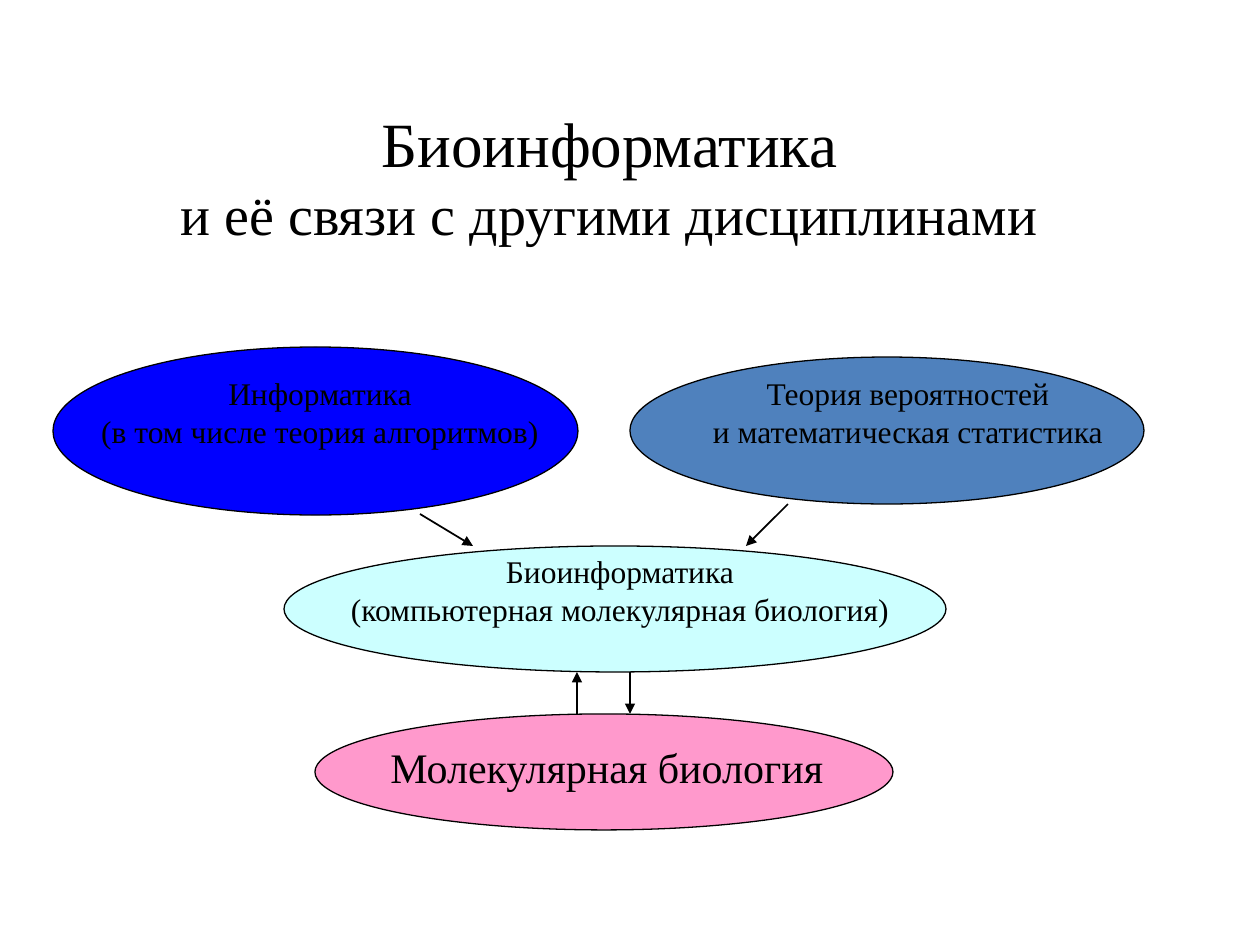
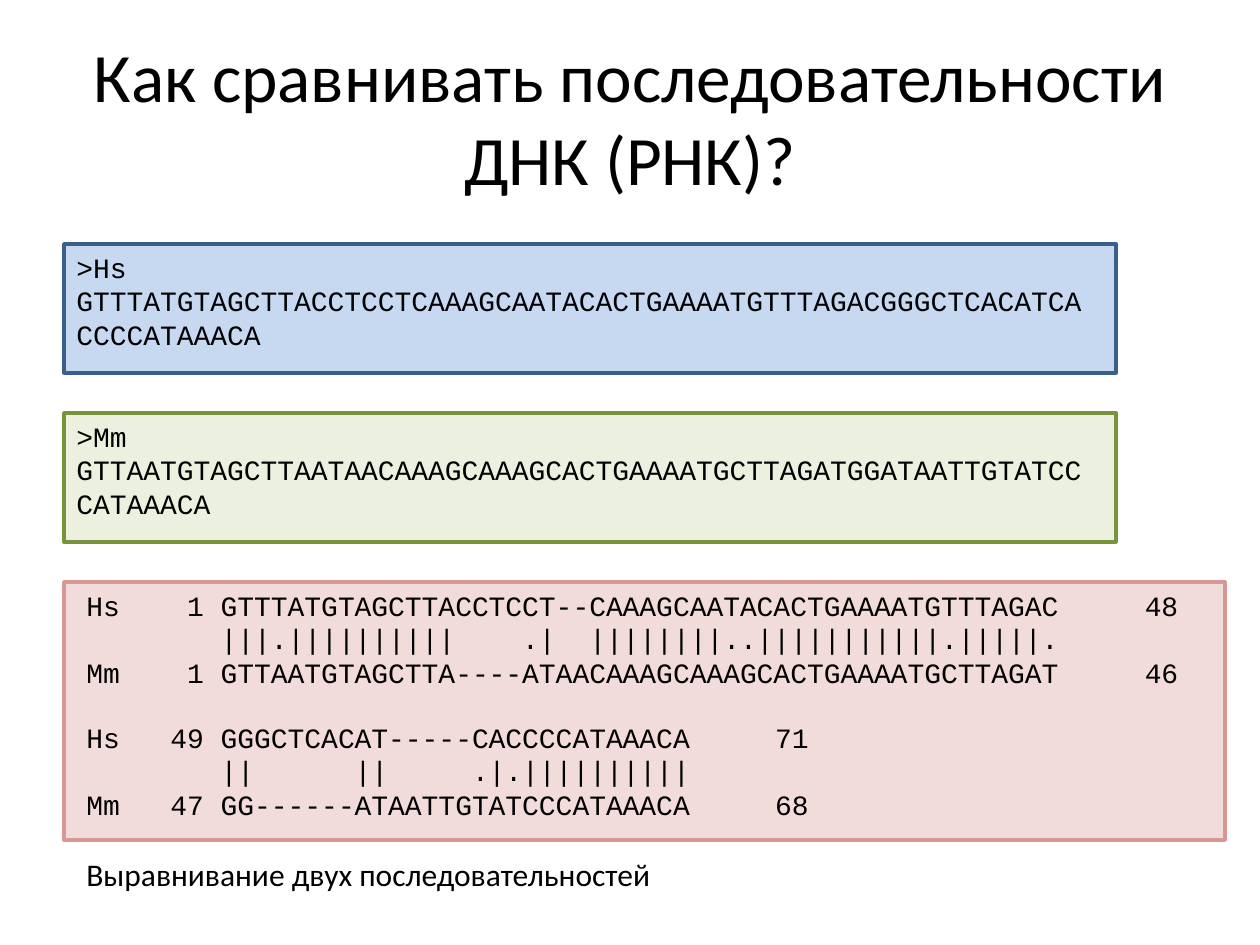
from collections import namedtuple

from lxml import etree
from pptx import Presentation
from pptx.dml.color import RGBColor
from pptx.enum.shapes import MSO_CONNECTOR, MSO_SHAPE
from pptx.enum.text import MSO_ANCHOR, MSO_AUTO_SIZE, PP_ALIGN
from pptx.oxml.ns import qn
from pptx.util import Emu, Pt

STRAIGHT = MSO_CONNECTOR.STRAIGHT
ELLIPSE = MSO_SHAPE.OVAL
RECTANGLE = MSO_SHAPE.RECTANGLE
TOP = MSO_ANCHOR.TOP
MIDDLE = MSO_ANCHOR.MIDDLE
GROW = MSO_AUTO_SIZE.SHAPE_TO_FIT_TEXT
NO_RESIZE = MSO_AUTO_SIZE.NONE
LEFT = PP_ALIGN.LEFT
CENTER = PP_ALIGN.CENTER

PIXELS_PER_INCH = 126
SLIDE_WIDTH, SLIDE_HEIGHT = 1260, 945
BLACK = "000000"
SERIF, SANS, MONO = "Times New Roman", "Calibri", "Courier New"
MONO_SIZE = 16
CHARACTER_WIDTH = Pt(MONO_SIZE * 0.6)
MONO_LINE = Pt(18)

Box = namedtuple("Box", "left top width height")

ELLIPSES = [
    (Box(262, 367, 578, 116), "FF99CC"),
    (Box(231, 199, 662, 126), "CCFFFF"),
    (Box(577, 10, 514, 147), "4F81BD"),
    (Box(0, 0, 525, 168), "0000FF"),
]
LABELS = [
    (Box(252, 199, 630, 97),
     ["Биоинформатика", "(компьютерная молекулярная биология)"], 18, CENTER),
    (Box(325, 388, 462, 63), ["Молекулярная биология"], 24, LEFT),
    (Box(10, 21, 514, 97),
     ["Информатика", "(в том числе теория алгоритмов)"], 18, CENTER),
    (Box(624, 21, 462, 97),
     ["Теория вероятностей", "и математическая статистика"], 18, CENTER),
]
ARROWS = [
    ((367, 167), (420, 199), 1),
    ((735, 157), (693, 199), 1),
    ((577, 325), (577, 367), 0.75),
    ((524, 367), (524, 325), 0.75),
]
SEQUENCES = [
    ([">Hs",
      "GTTTATGTAGCTTACCTCCTCAAAGCAATACACTGAAAATGTTTAGACGGGCTCACATCA",
      "CCCCATAAACA"], "C6D9F1", "3A5F8C"),
    ([">Mm",
      "GTTAATGTAGCTTAATAACAAAGCAAAGCACTGAAAATGCTTAGATGGATAATTGTATCC",
      "CATAAACA"], "EBF1DE", "77933C"),
]
ALIGNMENT_BLOCKS = [
    [("Hs", "1", "GTTTATGTAGCTTACCTCCT--CAAAGCAATACACTGAAAATGTTTAGAC", "48"),
     ("", "", "|||.||||||||||    .|  ||||||||..|||||||||||.|||||."),
     ("Mm", "1", "GTTAATGTAGCTTA----ATAACAAAGCAAAGCACTGAAAATGCTTAGAT", "46")],
    [("Hs", "49", "GGGCTCACAT-----CACCCCATAAACA", "71"),
     ("", "", "||      ||     .|.||||||||||"),
     ("Mm", "47", "GG------ATAATTGTATCCCATAAACA", "68")],
]


def px(length):
    return Emu(round(length * 914400 / PIXELS_PER_INCH))


def color(value):
    return RGBColor.from_string(value)


def apply_format(target, values):
    for name, value in values.items():
        setattr(target, name, value)


def inside(box, part):
    return Box(box.left + part.left, box.top + part.top, part.width, part.height)


def add_filled_shape(slide, kind, box, fill, line, line_width):
    shape = slide.shapes.add_shape(kind, *map(px, box))
    shape.shadow.inherit = False
    shape.fill.solid()
    shape.fill.fore_color.rgb = color(fill)
    shape.line.color.rgb = color(line)
    shape.line.width = Pt(line_width)


def format_run(run, font, size):
    apply_format(run.font, {"name": font, "size": Pt(size)})
    run.font.color.rgb = color(BLACK)


def add_text(slide, box, paragraphs, font, align=LEFT, wrap=True,
             anchor=TOP, resize=GROW):
    text_frame = slide.shapes.add_textbox(*map(px, box)).text_frame
    apply_format(text_frame, {"word_wrap": wrap, "auto_size": resize,
                              "vertical_anchor": anchor})
    for index, lines in enumerate(paragraphs):
        paragraph = text_frame.add_paragraph() if index else text_frame.paragraphs[0]
        paragraph.alignment = align
        for line_index, (text, size) in enumerate(lines):
            if line_index:
                paragraph.add_line_break()
            run = paragraph.add_run()
            run.text = text
            format_run(run, font, size)
    return text_frame


def add_arrow(slide, box, start, end, width):
    points = [px(origin + offset) for point in (start, end)
              for origin, offset in zip((box.left, box.top), point)]
    connector = slide.shapes.add_connector(STRAIGHT, *points)
    connector.line.color.rgb = color(BLACK)
    connector.line.width = Pt(width)
    line = connector.line._get_or_add_ln()
    etree.SubElement(line, qn("a:tailEnd"), type="triangle")
    etree.SubElement(connector._element.spPr, qn("a:effectLst"))


def set_tabs(paragraph, stops):
    tab_list = etree.SubElement(paragraph._p.get_or_add_pPr(), qn("a:tabLst"))
    for characters, align in stops:
        etree.SubElement(tab_list, qn("a:tab"),
                         pos=str(characters * CHARACTER_WIDTH), algn=align)


def draw_discipline_map(slide, box):
    for part, fill in ELLIPSES:
        add_filled_shape(slide, ELLIPSE, inside(box, part), fill, BLACK, 0.75)
    for part, lines, size, align in LABELS:
        add_text(slide, inside(box, part), [[(line, size) for line in lines]],
                 SERIF, align, wrap=False)
    for start, end, width in ARROWS:
        add_arrow(slide, box, start, end, width)


def draw_sequence(slide, box, lines, fill, line):
    add_filled_shape(slide, RECTANGLE, box, fill, line, 2)
    add_text(slide, inside(box, Box(0, 0, box.width + 29, 152)),
             [[(text, MONO_SIZE)] for text in lines], MONO)


def draw_alignment(slide, box):
    add_filled_shape(slide, RECTANGLE, box, "F2DCDB", "D99694", 2)
    rows = [row for block in ALIGNMENT_BLOCKS for row in block]
    text_frame = add_text(slide, inside(box, Box(10, 0, 1145, 285)),
                          [[("\t".join(row), MONO_SIZE)] for row in rows], MONO)
    for paragraph, row in zip(text_frame.paragraphs, rows):
        set_tabs(paragraph, [(7, "r"), (8, "l"), (13 + len(row[2]), "l")])
    second_block = text_frame.paragraphs[len(ALIGNMENT_BLOCKS[0])]
    second_block.space_before = MONO_LINE
    add_text(slide, inside(box, Box(10, 267, 922, 50)),
             [[("Выравнивание двух последовательностей", 18)]], SANS)


def build_disciplines_slide(slide):
    add_text(slide, Box(168, 98, 883, 155),
             [[("Биоинформатика", 36), ("и её связи с другими дисциплинами", 32)]],
             SERIF, CENTER, wrap=False)
    draw_discipline_map(slide, Box(53, 347, 1092, 483))


def build_comparison_slide(slide):
    add_text(slide, Box(63, 38, 1134, 157),
             [[("Как сравнивать последовательности ДНК (РНК)?", 39.6)]],
             SANS, CENTER, anchor=MIDDLE, resize=NO_RESIZE)
    top, step = 244, 169
    for index, (lines, fill, line) in enumerate(SEQUENCES):
        draw_sequence(slide, Box(64, top + index * step, 1052, 129), lines, fill, line)
    draw_alignment(slide, Box(64, top + len(SEQUENCES) * step, 1161, 258))


def main():
    presentation = Presentation()
    apply_format(presentation, {"slide_width": px(SLIDE_WIDTH),
                                "slide_height": px(SLIDE_HEIGHT)})
    for build in (build_disciplines_slide, build_comparison_slide):
        build(presentation.slides.add_slide(presentation.slide_layouts[6]))
    presentation.save("out.pptx")


if __name__ == "__main__":
    main()
